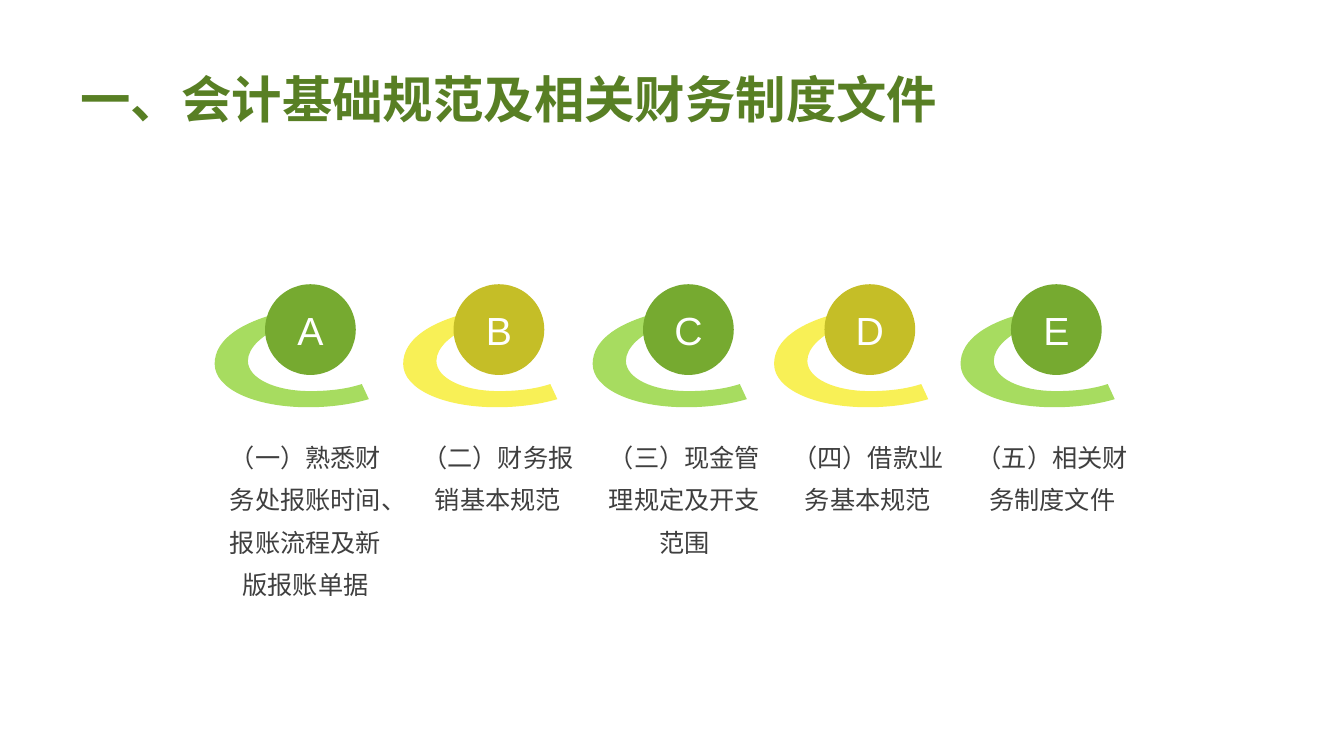
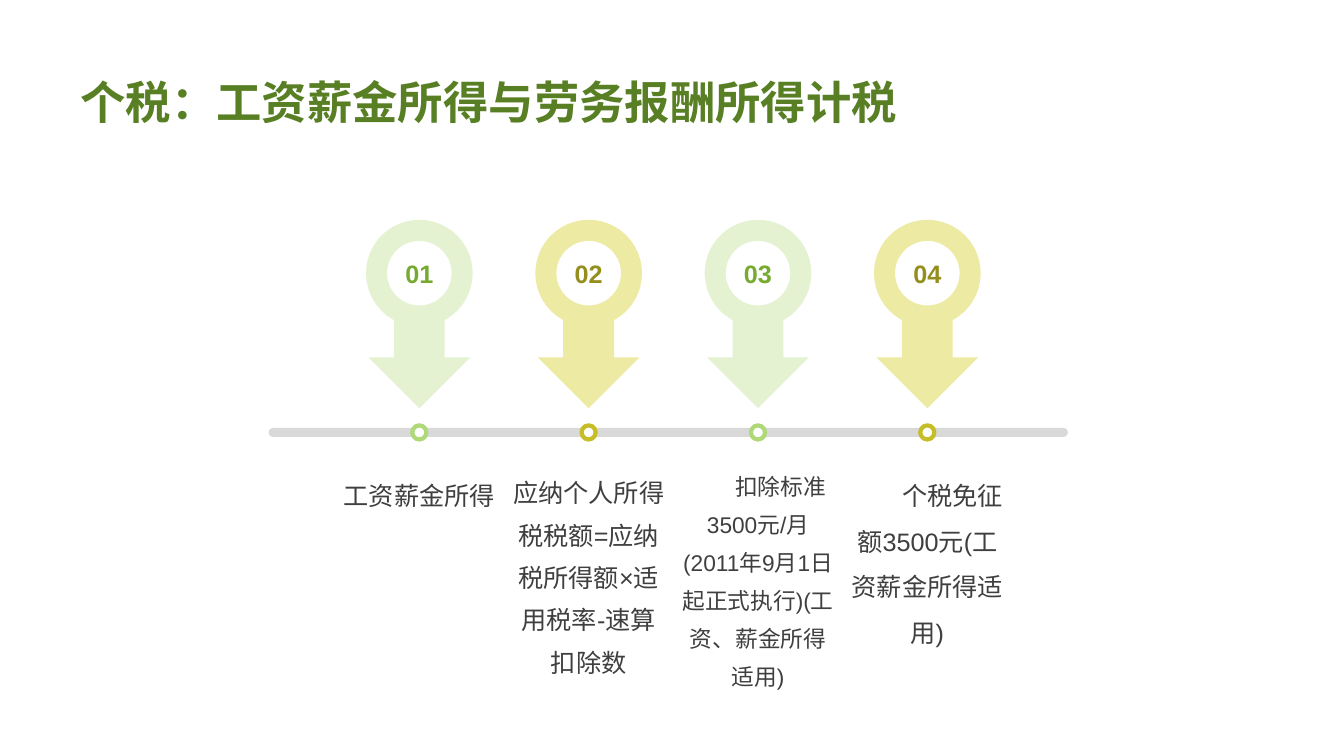
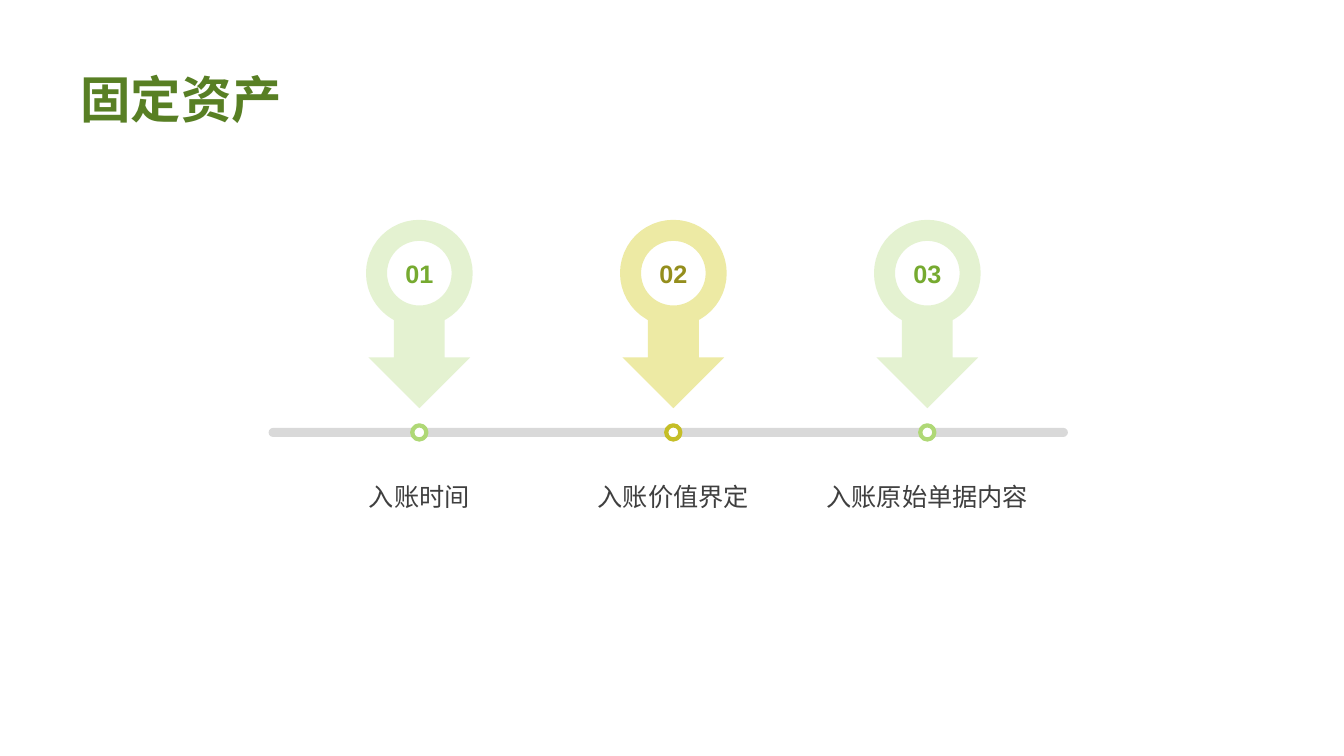
from lxml import etree
from pptx import Presentation
from pptx.dml.color import RGBColor
from pptx.enum.shapes import MSO_SHAPE as Shape
from pptx.enum.text import MSO_ANCHOR as Anchor, PP_ALIGN as Align
from pptx.oxml.ns import qn
from pptx.util import Inches, Pt

FONT = "Arial"
COLORS = {
    "title": "587F24", "body": "3F3F3F", "white": "FFFFFF", "axis": "D9D9D9",
    "green": "76AA30", "olive": "C5BE27",
    "green_swoosh": "A7DC60", "olive_swoosh": "F8F056",
    "green_arrow": "E4F2D1", "olive_arrow": "EDEAA4",
    "green_dot": "AFD876", "olive_dot": "C5BE27",
    "green_number": "76AA30", "olive_number": "948E1D",
}
THEMES = ("green", "olive")

# letter, disc centre, caption left, caption
CHAPTERS = [
    ("A", 3.08, 2.24, "（一）熟悉财务处报账时间、报账流程及新版报账单据"),
    ("B", 4.95, 4.15, "（二）财务报销基本规范"),
    ("C", 6.83, 6.00, "（三）现金管理规定及开支范围"),
    ("D", 8.63, 7.82, "（四）借款业务基本规范"),
    ("E", 10.48, 9.65, "（五）相关财务制度文件"),
]

TIMELINES = [
    {"title": "个税：工资薪金所得与劳务报酬所得计税", "title_size": 32.4,
     "label_width": 1.54, "label_bottom": 6.92,
     "steps": [
         {"text": "工资薪金所得"},
         {"text": "应纳个人所得税税额=应纳税所得额×适用税率-速算扣除数", "spacing": 1.4},
         {"text": "扣除标准3500元/月(2011年9月1日起正式执行)(工资、薪金所得适用)",
          "size": 16.2, "spacing": 1.4, "indent": 0.45, "top": 4.58},
         {"text": "个税免征额3500元(工资薪金所得适用)", "indent": 0.5},
     ]},
    {"title": "固定资产", "title_size": 36,
     "label_width": 2.33, "label_bottom": 6.61,
     "steps": [{"text": "入账时间"}, {"text": "入账价值界定"}, {"text": "入账原始单据内容"}]},
]

# Swoosh outline in inches from the disc centre: one point is a line, three a curve
SWOOSH_START = (-0.25, -0.18)
SWOOSH = [
    [(-0.69, -0.08), (-0.95, 0.1), (-0.95, 0.34)],
    [(-0.95, 0.59), (-0.55, 0.77), (-0.02, 0.77)],
    [(0.2, 0.77), (0.41, 0.74), (0.58, 0.69)],
    [(0.51, 0.54)],
    [(0.36, 0.59), (0.18, 0.61), (0, 0.61)],
    [(-0.36, 0.61), (-0.62, 0.48), (-0.62, 0.31)],
    [(-0.62, 0.18), (-0.48, 0.05), (-0.25, -0.05)],
]
DISC_Y, DISC_SIZE = 3.27, 0.9
FIRST_STEP_X, LAST_STEP_X, AXIS_Y = 4.16, 9.2, 4.29


def rgb(name):
    return RGBColor.from_string(COLORS[name])


def write(frame, text, size, color, bold=False, align=Align.CENTER, spacing=None, indent=0):
    frame.word_wrap = True
    paragraph = frame.paragraphs[0]
    paragraph.alignment = align
    if spacing:
        paragraph.line_spacing = spacing
    if indent:
        paragraph._p.get_or_add_pPr().set("indent", str(Inches(indent)))
    run = paragraph.add_run()
    run.text = text
    run.font.name = FONT
    run.font.size = Pt(size)
    run.font.bold = bold
    run.font.color.rgb = rgb(color)


def no_margins(frame):
    frame.margin_left = frame.margin_top = frame.margin_right = frame.margin_bottom = 0


def paint(shape, fill, line=None, line_width=0):
    shape.shadow.inherit = False
    shape.fill.solid()
    shape.fill.fore_color.rgb = rgb(fill)
    if line:
        shape.line.color.rgb = rgb(line)
        shape.line.width = Pt(line_width)
    else:
        shape.line.fill.background()


def add_centred(slide, kind, x, y, width, height, fill, line=None, line_width=0):
    shape = slide.shapes.add_shape(kind, Inches(x - width / 2), Inches(y - height / 2),
                                   Inches(width), Inches(height))
    paint(shape, fill, line, line_width)
    shape.text_frame.vertical_anchor = Anchor.MIDDLE
    return shape


def add_caption(slide, left, top, width, height, text, size=18, spacing=1.4, indent=0):
    frame = slide.shapes.add_textbox(Inches(left), Inches(top),
                                     Inches(width), Inches(height)).text_frame
    no_margins(frame)
    write(frame, text, size, "body", spacing=spacing, indent=indent)


def add_titled_slide(deck, title, size):
    slide = deck.slides.add_slide(deck.slide_layouts[6])
    frame = slide.shapes.add_textbox(Inches(0.7), Inches(0.41),
                                     Inches(9.04), Inches(0.92)).text_frame
    frame.vertical_anchor = Anchor.BOTTOM
    write(frame, title, size, "title", bold=True, align=Align.LEFT, spacing=0.9)
    return slide


def add_swoosh(slide, x, y, fill):
    """Draw the outline through its corner points, then bend the curved pieces."""
    def place(point):
        return Inches(x + point[0]), Inches(y + point[1])

    builder = slide.shapes.build_freeform(*place(SWOOSH_START))
    builder.add_line_segments([place(piece[-1]) for piece in SWOOSH], close=True)
    swoosh = builder.convert_to_shape()
    paint(swoosh, fill)
    lines = list(swoosh._element.iter(qn("a:lnTo")))
    for line, piece in zip(lines, SWOOSH):
        if len(piece) == 1:
            continue
        curve = etree.Element(qn("a:cubicBezTo"))
        for point in piece:
            px, py = place(point)
            etree.SubElement(curve, qn("a:pt"), x=str(px - swoosh.left),
                             y=str(py - swoosh.top))
        line.getparent().replace(line, curve)


def build_chapters(deck):
    slide = add_titled_slide(deck, "一、会计基础规范及相关财务制度文件", 36)
    for i, (letter, x, caption_left, caption) in enumerate(CHAPTERS):
        theme = THEMES[i % 2]
        add_swoosh(slide, x, DISC_Y, theme + "_swoosh")
        disc = add_centred(slide, Shape.OVAL, x, DISC_Y, DISC_SIZE, DISC_SIZE, theme)
        write(disc.text_frame, letter, 28, "white")
        add_caption(slide, caption_left, 4.27, 1.58, 2.19, caption)


def build_timeline(deck, timeline):
    slide = add_titled_slide(deck, timeline["title"], timeline["title_size"])
    axis = add_centred(slide, Shape.ROUNDED_RECTANGLE, 6.63, AXIS_Y, 7.93, 0.09, "axis")
    axis.adjustments[0] = 0.5
    steps = timeline["steps"]
    gap = (LAST_STEP_X - FIRST_STEP_X) / (len(steps) - 1)
    width = timeline["label_width"]
    for i, step in enumerate(steps):
        x = FIRST_STEP_X + i * gap
        theme = THEMES[i % 2]
        add_centred(slide, Shape.DOWN_ARROW, x, 3.38, 1.01, 1.34, theme + "_arrow")
        ring = add_centred(slide, Shape.OVAL, x, 2.71, 0.85, 0.85, "white",
                           theme + "_arrow", 15)
        no_margins(ring.text_frame)
        write(ring.text_frame, f"{i + 1:02}", 18, theme + "_number", bold=True)
        add_centred(slide, Shape.OVAL, x, AXIS_Y, 0.14, 0.14, "white", theme + "_dot", 3)
        top = step.get("top", 4.62)
        add_caption(slide, x - width / 2, top, width, timeline["label_bottom"] - top,
                    step["text"], step.get("size", 18), step.get("spacing", 1.5),
                    step.get("indent", 0))


def main():
    deck = Presentation()
    deck.slide_width, deck.slide_height = Inches(40 / 3), Inches(7.5)
    build_chapters(deck)
    for timeline in TIMELINES:
        build_timeline(deck, timeline)
    deck.save("out.pptx")


if __name__ == "__main__":
    main()
